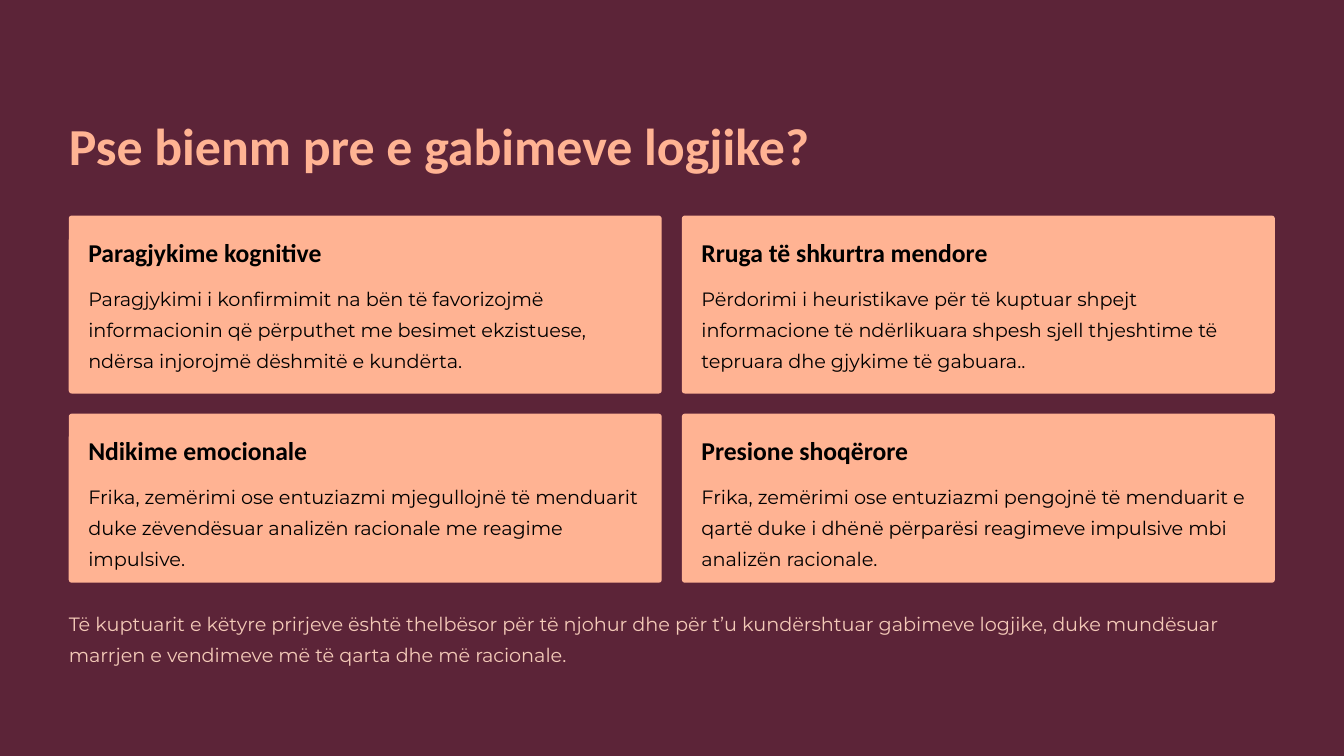
from dataclasses import dataclass

from pptx import Presentation
from pptx import util as u
from pptx.dml.color import RGBColor
from pptx.enum import shapes, text


@dataclass(frozen=True)
class Theme:
    back: str = "5C2438"
    peach: str = "FFB393"
    pale: str = "F4CAB8"
    ink: str = "000000"
    head: str = "Calibri"
    body: str = "Montserrat"
    title: float = 44.5
    label: float = 22
    copy: float = 16.5


theme = Theme()

deck = Presentation()
deck.slide_width, deck.slide_height = u.Cm(40.64), u.Cm(22.86)
slide = deck.slides.add_slide(deck.slide_layouts[6])
slide.background.fill.solid()
slide.background.fill.fore_color.rgb = RGBColor.from_string(theme.back)


def write(words, left, top, width, height, font=theme.body, size=theme.copy,
          color=theme.ink, bold=False, lead=26.5):
    box = slide.shapes.add_textbox(u.Cm(left), u.Cm(top), u.Cm(width), u.Cm(height))
    frame = box.text_frame
    frame.margin_left = frame.margin_right = frame.margin_top = frame.margin_bottom = 0
    frame.word_wrap = True
    frame.vertical_anchor = text.MSO_ANCHOR.TOP
    line = frame.paragraphs[0]
    line.alignment = text.PP_ALIGN.LEFT
    line.line_spacing = u.Pt(lead)
    run = line.add_run()
    run.text = words
    run.font.name, run.font.size, run.font.bold = font, u.Pt(size), bold
    run.font.color.rgb = RGBColor.from_string(color)


# Title
left = 2.08
write("Pse bienm pre e gabimeve logjike?", left, 3.35, 27.71, 1.98, font=theme.head,
      size=theme.title, color=theme.peach, bold=True, lead=56)

# Cards: two columns, two rows
cards = [
    ("Paragjykime kognitive",
     "Paragjykimi i konfirmimit na bën të favorizojmë informacionin që përputhet "
     "me besimet ekzistuese, ndërsa injorojmë dëshmitë e kundërta."),
    ("Rruga të shkurtra mendore",
     "Përdorimi i heuristikave për të kuptuar shpejt informacione të ndërlikuara "
     "shpesh sjell thjeshtime të tepruara dhe gjykime të gabuara.."),
    ("Ndikime emocionale",
     "Frika, zemërimi ose entuziazmi mjegullojnë të menduarit duke zëvendësuar "
     "analizën racionale me reagime impulsive."),
    ("Presione shoqërore",
     "Frika, zemërimi ose entuziazmi pengojnë të menduarit e qartë duke i dhënë "
     "përparësi reagimeve impulsive mbi analizën racionale."),
]
wide, gap, pad, round_by = 17.93, 0.61, 0.59, 0.09
inner = wide - 2 * pad
rows = [(5.38, 2.84), (5.11, 2.84)]  # card height, body height

for i, (label, body) in enumerate(cards):
    row, col = divmod(i, 2)
    high, deep = rows[row]
    x = left + col * (wide + gap)
    y = 6.52 + row * (rows[0][0] + gap)
    card = slide.shapes.add_shape(shapes.MSO_SHAPE.ROUNDED_RECTANGLE,
                                  u.Cm(x), u.Cm(y), u.Cm(wide), u.Cm(high))
    card.adjustments[0] = round_by / high
    card.shadow.inherit = False
    card.fill.solid()
    card.fill.fore_color.rgb = RGBColor.from_string(theme.peach)
    card.line.fill.background()
    write(label, x + pad, y + pad, inner, 0.99, font=theme.head,
          size=theme.label, bold=True, lead=28)
    write(body, x + pad, y + 1.93, inner, deep)

# Closing remark
write("Të kuptuarit e këtyre prirjeve është thelbësor për të njohur dhe për t’u "
      "kundërshtuar gabimeve logjike, duke mundësuar marrjen e vendimeve më të "
      "qarta dhe më racionale.", left, 18.29, 2 * wide + gap, 1.9, color=theme.pale)

deck.save("out.pptx")
